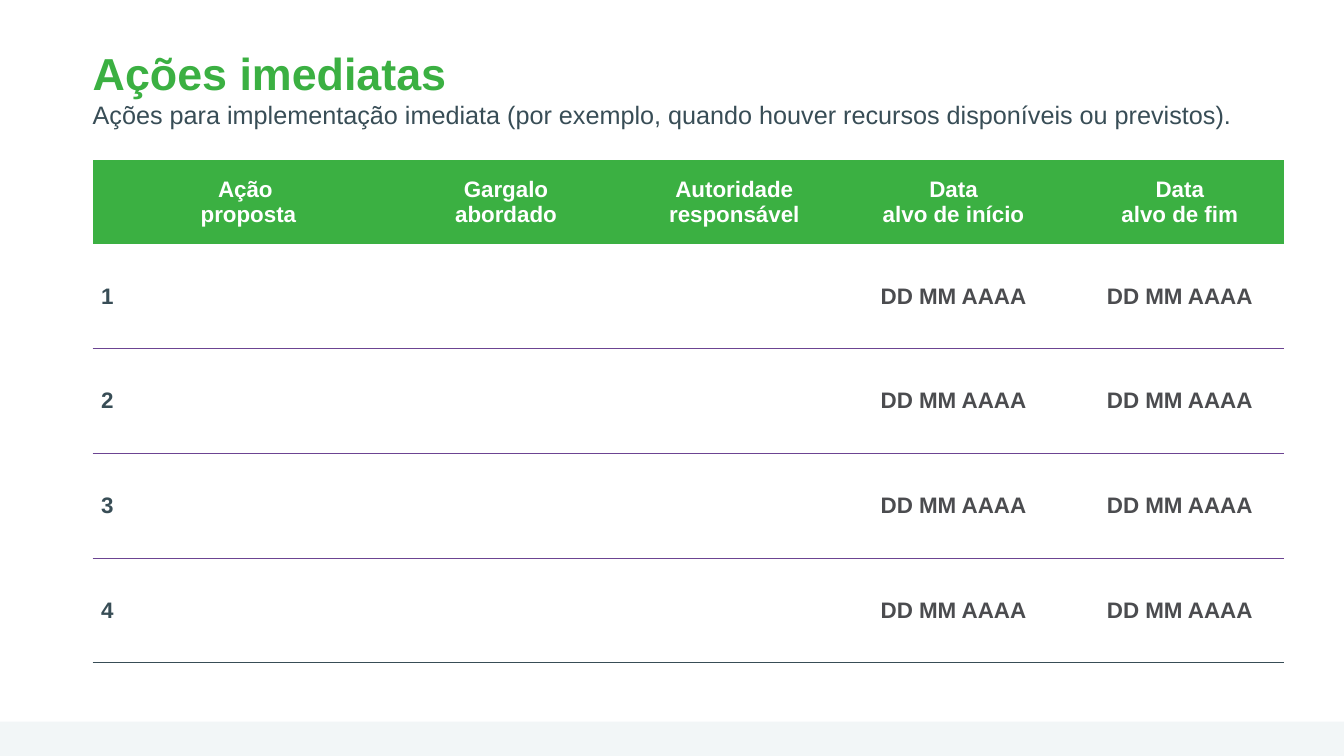
import pptx
import pptx.dml.color
import pptx.enum.shapes
import pptx.enum.text
import pptx.oxml
import pptx.oxml.ns
import pptx.util
from dataclasses import dataclass

Pt = pptx.util.Pt
ALIGN = pptx.enum.text.PP_ALIGN
MIDDLE = pptx.enum.text.MSO_ANCHOR.MIDDLE
PLAIN_TABLE = "{2D5ABB26-0587-4C30-8999-92F81FD0307C}"


@dataclass(frozen=True)
class Theme:
    font: str = "Arial"
    green: str = "3BB042"
    slate: str = "384D56"
    grey: str = "4B4C4F"
    purple: str = "6C4492"
    white: str = "FFFFFF"
    pale: str = "F2F6F7"
    title: float = 32
    subtitle: float = 18
    table: float = 16


THEME = Theme()
SLIDE_W, SLIDE_H = 960, 540
LEFT = 66.24
COLUMN_WIDTHS = [20.88, 180.72, 187.2, 138.96, 174.24, 149.04]
ROW_HEIGHTS = [59.76, 74.88, 74.88, 74.88, 74.16]

# "\v" is a line break, "\n" starts a new paragraph
HEADINGS = ["", "Ação \vproposta", "Gargalo\nabordado", "Autoridade responsável",
            "Data\valvo de início", "Data\valvo de fim"]
DATE = "DD MM AAAA"
HEADING_INSETS = dict(margin_left=Pt(5), margin_right=Pt(5), margin_top=0, margin_bottom=0)
BODY_INSETS = dict.fromkeys(
    ["margin_left", "margin_right", "margin_top", "margin_bottom"], Pt(3.6))


def apply(target, values):
    for name, value in values.items():
        setattr(target, name, value)


def rgb(colour):
    return pptx.dml.color.RGBColor.from_string(colour)


def style_font(font, size, colour, bold):
    apply(font, dict(name=THEME.font, size=Pt(size), bold=bold))
    font.color.rgb = rgb(colour)


def add_footer_band(slide):
    height = 24.48
    band = slide.shapes.add_shape(
        pptx.enum.shapes.MSO_SHAPE.RECTANGLE,
        0, Pt(SLIDE_H - height), Pt(SLIDE_W), Pt(height))
    band.shadow.inherit = False
    band.fill.solid()
    band.fill.fore_color.rgb = rgb(THEME.pale)
    band.line.fill.background()


def add_heading(slide, title, subtitle):
    frame = slide.shapes.add_textbox(Pt(LEFT), Pt(28.8), Pt(828), Pt(85.68)).text_frame
    apply(frame, dict(word_wrap=True, margin_left=0, margin_right=0,
                      margin_top=Pt(3.6), margin_bottom=0))
    paragraph = frame.paragraphs[0]
    title_run = paragraph.add_run()
    title_run.text = title
    style_font(title_run.font, THEME.title, THEME.green, True)
    paragraph.add_line_break()
    subtitle_run = paragraph.add_run()
    subtitle_run.text = subtitle
    style_font(subtitle_run.font, THEME.subtitle, THEME.slate, False)


def add_border(cell, edge, colour):
    rule = pptx.oxml.parse_xml(
        f'<a:{edge} {pptx.oxml.ns.nsdecls("a")} w="{Pt(1)}"><a:solidFill>'
        f'<a:srgbClr val="{colour}"/></a:solidFill></a:{edge}>')
    cell._tc.get_or_add_tcPr().append(rule)


def fill_cell(cell, text, colour, insets):
    apply(cell, dict(vertical_anchor=MIDDLE, **insets))
    cell.text = text
    for paragraph in cell.text_frame.paragraphs:
        paragraph.alignment = ALIGN.CENTER
        style_font(paragraph.font, THEME.table, colour, True)
        for run in paragraph.runs:
            style_font(run.font, THEME.table, colour, True)


def add_actions_table(slide):
    table = slide.shapes.add_table(
        len(ROW_HEIGHTS), len(COLUMN_WIDTHS), Pt(LEFT), Pt(114.48),
        Pt(sum(COLUMN_WIDTHS)), Pt(sum(ROW_HEIGHTS))).table
    apply(table, dict(first_row=False, horz_banding=False))
    table._tbl.tblPr.find(pptx.oxml.ns.qn("a:tableStyleId")).text = PLAIN_TABLE
    for column, width in zip(table.columns, COLUMN_WIDTHS):
        column.width = Pt(width)
    for row, height in zip(table.rows, ROW_HEIGHTS):
        row.height = Pt(height)

    # Heading row
    for column, heading in enumerate(HEADINGS):
        cell = table.cell(0, column)
        fill_cell(cell, heading, THEME.white, HEADING_INSETS)
        cell.fill.solid()
        cell.fill.fore_color.rgb = rgb(THEME.green)

    # Numbered action rows
    last = len(ROW_HEIGHTS) - 1
    for number in range(1, last + 1):
        for column, text in enumerate([str(number), "", "", "", DATE, DATE]):
            cell = table.cell(number, column)
            fill_cell(cell, text, THEME.grey if column else THEME.slate, BODY_INSETS)
            if number > 1:
                add_border(cell, "lnT", THEME.purple)
            add_border(cell, "lnB", THEME.slate if number == last else THEME.purple)
            cell.fill.background()


def main():
    deck = pptx.Presentation()
    apply(deck, dict(slide_width=Pt(SLIDE_W), slide_height=Pt(SLIDE_H)))
    slide = deck.slides.add_slide(deck.slide_layouts[6])
    add_footer_band(slide)
    add_heading(slide, "Ações imediatas",
                "Ações para implementação imediata (por exemplo, quando houver "
                "recursos disponíveis ou previstos).")
    add_actions_table(slide)
    deck.save("out.pptx")


if __name__ == "__main__":
    main()
